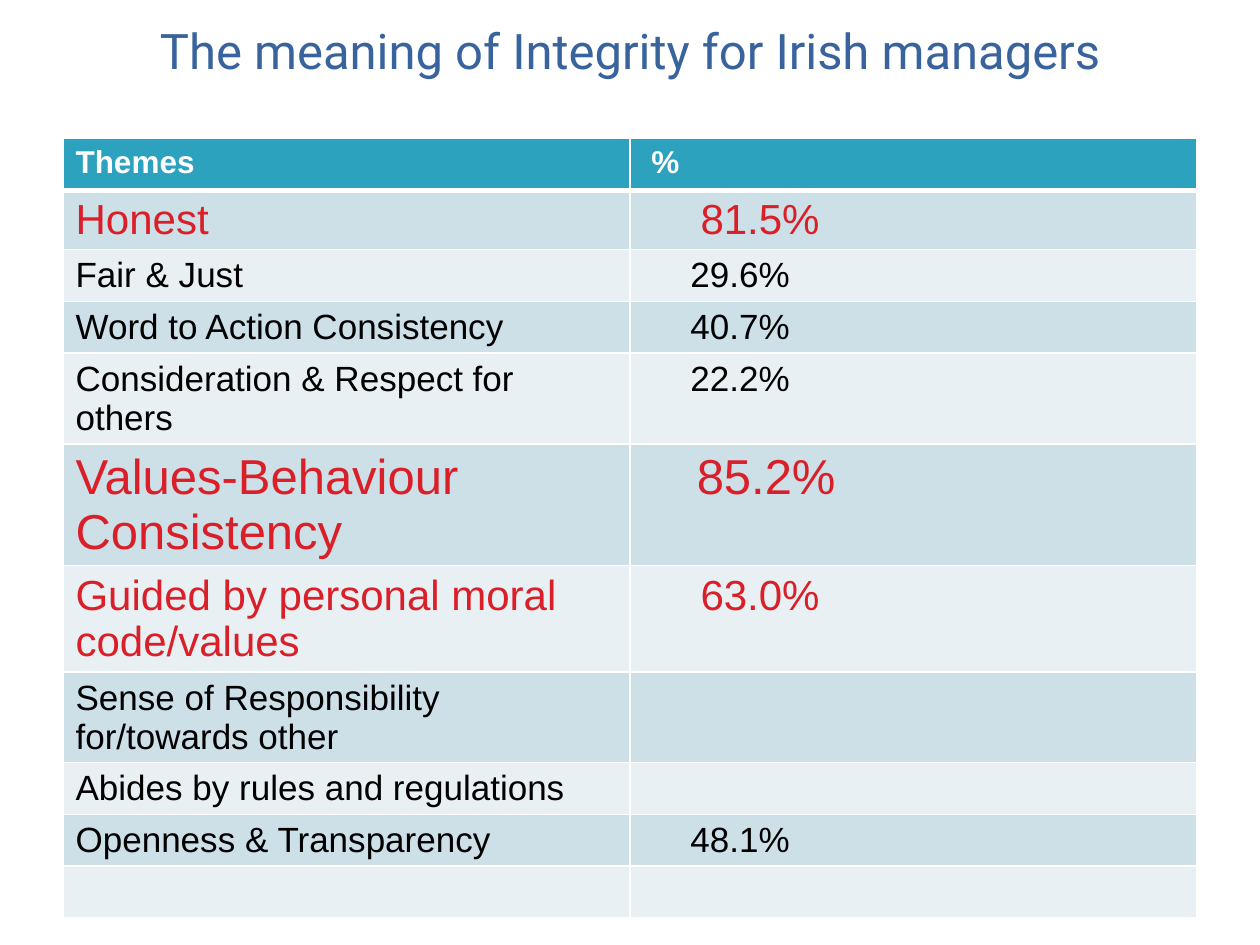
from pptx import Presentation, oxml, util as u
from pptx.dml.color import RGBColor
from pptx.enum import text
from pptx.oxml import ns

HUES = {"title": "39639D", "head": "2DA2BF", "dark": "CDE0E8",
        "light": "E8F0F4", "white": "FFFFFF", "red": "DA1F28", "black": "000000"}
INSETS = {18: 0.17, 20: 0.48, 24: 0.56, 28: 0.53}
ROWS = [
    ("Themes", "%", 18, "white"),
    ("Honest", "81.5%", 24, "red"),
    ("Fair & Just", "29.6%", 20, "black"),
    ("Word to Action Consistency", "40.7%", 20, "black"),
    ("Consideration & Respect for others", "22.2%", 20, "black"),
    ("Values-Behaviour Consistency", "85.2%", 28, "red"),
    ("Guided by personal moral code/values", "63.0%", 24, "red"),
    ("Sense of Responsibility for/towards other", "", 20, "black"),
    ("Abides by rules and regulations", "", 20, "black"),
    ("Openness & Transparency", "48.1%", 20, "black"),
    ("", "", 18, "black"),
]


def hue(name):
    """Return the named colour."""
    return RGBColor.from_string(HUES[name])


def style(para, face, size, name, bold=False):
    """Format every run of a paragraph."""
    for run in para.runs:
        font = run.font
        font.name, font.size, font.bold = face, u.Pt(size), bold
        font.color.rgb = hue(name)


def add_title(slide, words):
    """Place and format the slide title."""
    title = slide.shapes.title
    title.left, title.top = u.Inches(0.17), u.Inches(0)
    title.width, title.height = u.Inches(9.33), u.Inches(0.8)
    frame = title.text_frame
    frame.text = words
    frame.margin_left = u.Inches(0.43)
    frame.vertical_anchor = text.MSO_ANCHOR.MIDDLE
    para = frame.paragraphs[0]
    para.alignment = text.PP_ALIGN.CENTER
    style(para, "Roboto", 28, "title")


def add_rules(cell, top, base):
    """Draw white borders around a cell, with widths in points."""
    props = cell._tc.get_or_add_tcPr()
    for spot, (side, width) in enumerate(zip("LRTB", (1, 1, top, base))):
        props.insert(spot, oxml.parse_xml(
            f'<a:ln{side} {ns.nsdecls("a")} w="{u.Pt(width)}"><a:solidFill>'
            f'<a:srgbClr val="{HUES["white"]}"/></a:solidFill></a:ln{side}>'))


def fill_cell(cell, words, size, name, row):
    """Write one cell with its fill and borders."""
    cell.fill.solid()
    cell.fill.fore_color.rgb = hue("head" if row == 0 else "dark" if row % 2 else "light")
    add_rules(cell, 3 if row == 1 else 1, 3 if row == 0 else 1)
    if words:
        cell.text = words
        style(cell.text_frame.paragraphs[0], "Arial", size, name, row == 0)


def add_grid(slide):
    """Add the table of themes and shares."""
    grid = slide.shapes.add_table(len(ROWS), 2, u.Inches(0.5), u.Inches(1.1),
                                  u.Inches(9), u.Inches(0.41 * len(ROWS))).table
    for row, (theme, share, size, name) in enumerate(ROWS):
        fill_cell(grid.cell(row, 0), theme, size, name, row)
        cell = grid.cell(row, 1)
        fill_cell(cell, share, size, name, row)
        cell.margin_left = u.Inches(INSETS[size])


def main():
    """Build and save the slide."""
    deck = Presentation()
    deck.slide_width, deck.slide_height = u.Inches(10), u.Inches(7.5)
    slide = deck.slides.add_slide(deck.slide_layouts[5])
    add_title(slide, "The meaning of Integrity for Irish managers")
    add_grid(slide)
    deck.save("out.pptx")


if __name__ == "__main__":
    main()
